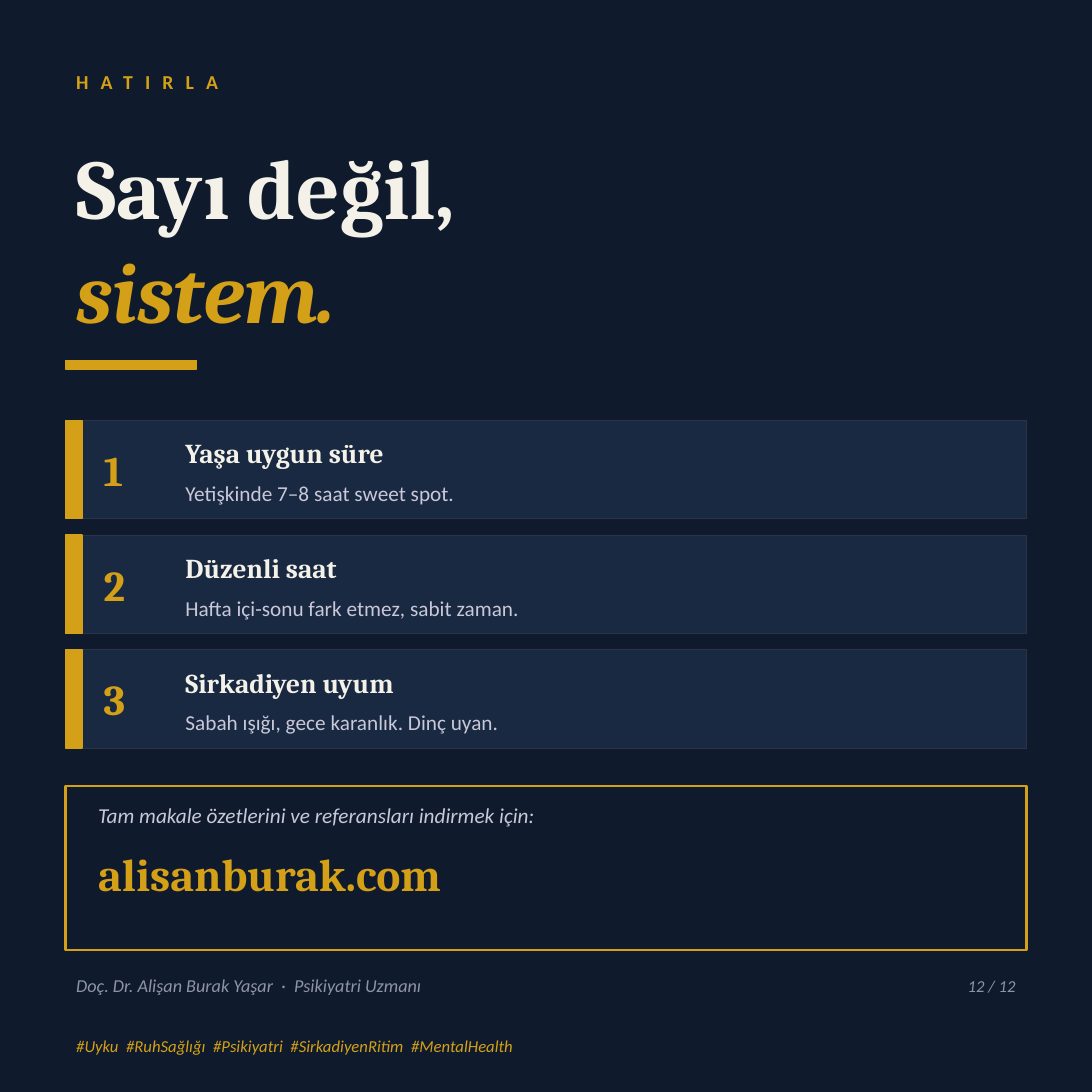
import pptx
import pptx.dml.color
import pptx.enum.shapes
import pptx.enum.text
import pptx.util
from pptx.util import Inches

COLORS = {
    "navy": "0F1B2D",
    "panel": "1A2942",
    "edge": "2A3349",
    "gold": "D4A017",
    "cream": "F4F1E8",
    "mist": "C8C8D8",
    "gray": "8E94A6",
}
SERIF, SANS = "Cambria", "Calibri"
LEFT, WIDTH = 0.6, 8.8
TIPS_TOP, TIP_STEP, TIP_HEIGHT = 3.85, 1.05, 0.9
TIPS = [
    ("Yaşa uygun süre", "Yetişkinde 7–8 saat sweet spot."),
    ("Düzenli saat", "Hafta içi-sonu fark etmez, sabit zaman."),
    ("Sirkadiyen uyum", "Sabah ışığı, gece karanlık. Dinç uyan."),
]


def rgb(name):
    return pptx.dml.color.RGBColor.from_string(COLORS[name])


class SlideBuilder:
    """Holds the text styles and the page being filled."""

    styles = {
        "kicker": (SANS, 13, "gold", {"bold": True}),
        "title": (SERIF, 56, "cream", {"bold": True}),
        "accent": (SERIF, 56, "gold", {"bold": True, "italic": True}),
        "number": (SERIF, 28, "gold", {"bold": True}),
        "heading": (SERIF, 18, "cream", {"bold": True}),
        "body": (SANS, 14, "mist", {}),
        "prompt": (SANS, 14, "mist", {"italic": True}),
        "site": (SERIF, 30, "gold", {"bold": True}),
        "author": (SANS, 12, "gray", {"italic": True}),
        "counter": (SANS, 11, "gray", {"italic": True}),
        "tags": (SANS, 11, "gold", {"italic": True}),
    }

    def __init__(self, deck):
        self.page = deck.slides.add_slide(deck.slide_layouts[6])
        fill = self.page.background.fill
        fill.solid()
        fill.fore_color.rgb = rgb("navy")

    def rectangle(self, left, top, width, height, fill, line, weight=1):
        box = self.page.shapes.add_shape(
            pptx.enum.shapes.MSO_SHAPE.RECTANGLE,
            Inches(left), Inches(top), Inches(width), Inches(height))
        box.shadow.inherit = False
        box.fill.solid()
        box.fill.fore_color.rgb = rgb(fill)
        box.line.color.rgb = rgb(line)
        box.line.width = pptx.util.Pt(weight)

    def text(self, words, style, left, top, width, height,
             anchor="MIDDLE", align="LEFT", spacing=None):
        """Add one line of text; spacing is the letter spacing in points."""
        box = self.page.shapes.add_textbox(
            Inches(left), Inches(top), Inches(width), Inches(height))
        frame = box.text_frame
        frame.word_wrap = True
        frame.vertical_anchor = pptx.enum.text.MSO_ANCHOR[anchor]
        para = frame.paragraphs[0]
        para.alignment = pptx.enum.text.PP_ALIGN[align]
        span = para.add_run()
        span.text = words
        name, size, color, extras = self.styles[style]
        formats = {"name": name, "size": pptx.util.Pt(size), **extras}
        for attribute, value in formats.items():
            setattr(span.font, attribute, value)
        span.font.color.rgb = rgb(color)
        if spacing:
            span._r.get_or_add_rPr().set("spc", str(spacing * 100))

    def tip(self, number, top, heading, body):
        """Add a numbered card with a gold bar on its left."""
        self.rectangle(LEFT, top, WIDTH, TIP_HEIGHT, "panel", "edge", 0.5)
        self.rectangle(LEFT, top, 0.15, TIP_HEIGHT, "gold", "gold")
        self.text(str(number), "number", 0.85, top + 0.1, 0.7, 0.7)
        self.text(heading, "heading", 1.6, top + 0.1, 7.7, 0.4, "TOP")
        self.text(body, "body", 1.6, top + 0.5, 7.7, 0.4, "TOP")


def main():
    deck = pptx.Presentation()
    deck.slide_width = deck.slide_height = Inches(10)
    slide = SlideBuilder(deck)

    slide.text("HATIRLA", "kicker", LEFT, 0.55, WIDTH, 0.4, spacing=8)
    slide.text("Sayı değil,", "title", LEFT, 1.2, WIDTH, 1)
    slide.text("sistem.", "accent", LEFT, 2.15, WIDTH, 1)
    slide.rectangle(LEFT, 3.3, 1.2, 0.08, "gold", "gold")

    for index, (heading, body) in enumerate(TIPS):
        slide.tip(index + 1, TIPS_TOP + index * TIP_STEP, heading, body)

    slide.rectangle(LEFT, 7.2, WIDTH, 1.5, "navy", "gold", 1.5)
    slide.text("Tam makale özetlerini ve referansları indirmek için:",
               "prompt", 0.8, 7.3, 8.4, 0.4, "TOP")
    slide.text("alisanburak.com", "site", 0.8, 7.7, 8.4, 0.7, "TOP")

    slide.text("Doç. Dr. Alişan Burak Yaşar  ·  Psikiyatri Uzmanı",
               "author", LEFT, 8.85, WIDTH, 0.35)
    slide.text("12 / 12", "counter", 7.9, 8.85, 1.5, 0.35, align="RIGHT")
    slide.text("#Uyku  #RuhSağlığı  #Psikiyatri  #SirkadiyenRitim  #MentalHealth",
               "tags", LEFT, 9.4, WIDTH, 0.35)

    deck.save("out.pptx")


if __name__ == "__main__":
    main()
